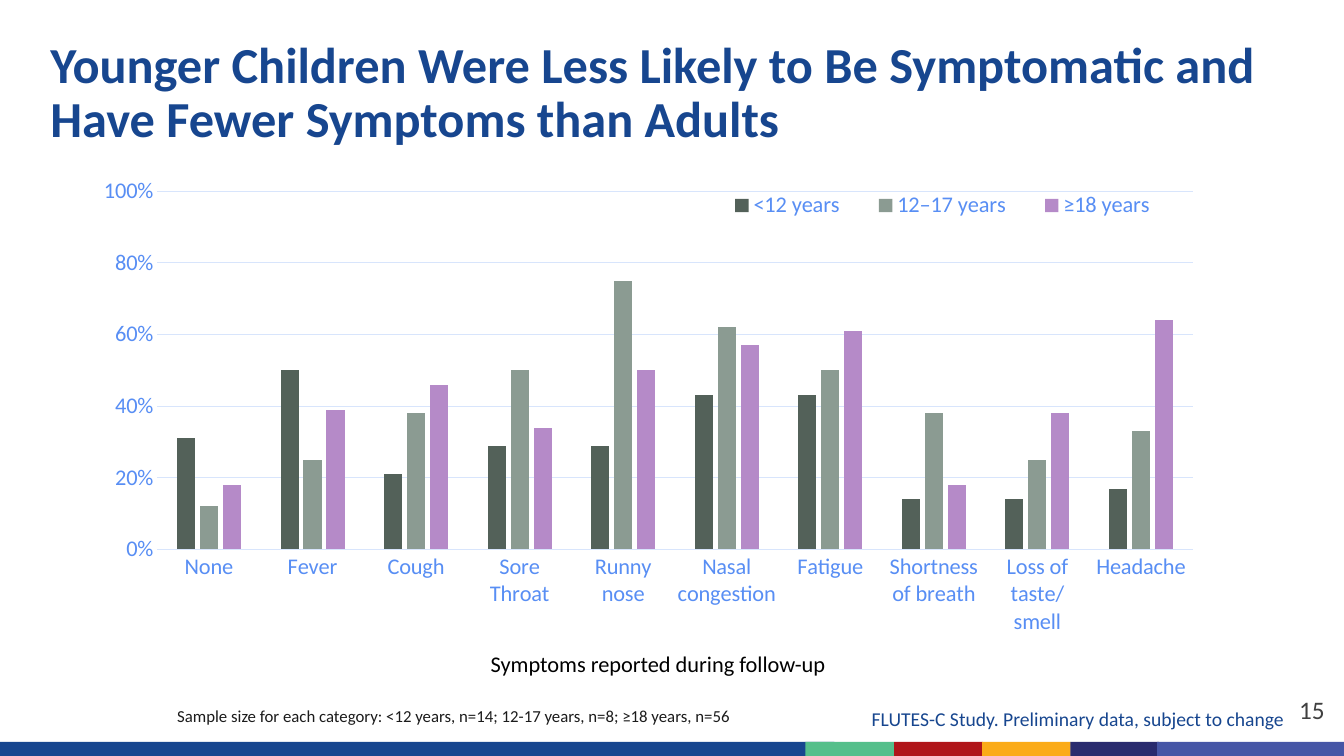
from dataclasses import dataclass

from lxml.etree import SubElement
from pptx import Presentation
from pptx.chart.data import CategoryChartData
from pptx.dml.color import RGBColor
from pptx.enum.chart import XL_CHART_TYPE as ChartType
from pptx.enum.chart import XL_LEGEND_POSITION as LegendPos
from pptx.enum.chart import XL_TICK_MARK as Tick
from pptx.enum.shapes import MSO_SHAPE as Shape
from pptx.enum.text import MSO_ANCHOR as Anchor
from pptx.enum.text import MSO_AUTO_SIZE as AutoSize
from pptx.enum.text import PP_ALIGN as Align
from pptx.oxml.ns import qn
from pptx.util import Pt

FONT = "Calibri"
COLORS = {
    "navy": "17468F", "green": "55BF8B", "red": "B01519", "amber": "FBAB18",
    "indigo": "292B6E", "violet": "4656A6", "black": "000000", "ink": "1B1B1B",
    "gray": "404040", "label": "588EF4", "grid": "D8E5FC", "under_12": "536159",
    "teens": "8B9B92", "adults": "B58AC8",
}


@dataclass
class Band:
    left: float
    width: float
    color: str


@dataclass
class Label:
    text: str
    left: float
    top: float
    width: float
    height: float
    size: int
    color: str
    wrap: bool = False


@dataclass
class AgeGroup:
    name: str
    color: str
    shares: tuple[float, ...]


BANDS = [
    Band(0, 596, "navy"),
    Band(575.3, 63.3, "green"),
    Band(638.6, 63.3, "red"),
    Band(701.5, 63.3, "amber"),
    Band(764.6, 63.3, "indigo"),
    Band(826.6, 133.4, "violet"),
]
LABELS = [
    Label("Symptoms reported during follow-up", 343.4, 460.8, 257, 26.6, 16, "black"),
    Label("15", 920.9, 492.5, 33, 29, 18, "gray"),
    Label("Sample size for each category: <12 years, n=14; 12-17 years, n=8; "
          "≥18 years, n=56", 119.5, 500.4, 504, 21.8, 12, "ink", True),
    Label("FLUTES-C Study. Preliminary data, subject to change",
          615.6, 501.1, 311.8, 24.2, 14, "navy"),
]
SYMPTOMS = ["None", "Fever", "Cough", "Sore Throat", "Runny nose", "Nasal congestion",
            "Fatigue", "Shortness of breath", "Loss of taste/smell", "Headache"]
AGE_GROUPS = [
    AgeGroup("<12 years", "under_12",
             (0.31, 0.5, 0.21, 0.29, 0.29, 0.43, 0.43, 0.14, 0.14, 0.17)),
    AgeGroup("12–17 years", "teens",
             (0.12, 0.25, 0.38, 0.5, 0.75, 0.62, 0.5, 0.38, 0.25, 0.33)),
    AgeGroup("≥18 years", "adults",
             (0.18, 0.39, 0.46, 0.34, 0.5, 0.57, 0.61, 0.18, 0.38, 0.64)),
]


def rgb(name: str) -> RGBColor:
    """Look up a palette colour."""
    return RGBColor.from_string(COLORS[name])


def style_font(font, size: int, color: str, bold: bool = False) -> None:
    """Apply the slide font with a size, colour and weight."""
    font.name, font.size, font.bold = FONT, Pt(size), bold
    font.color.rgb = rgb(color)


def style_line(line) -> None:
    """Give a chart line the pale grid look."""
    line.color.rgb = rgb("grid")
    line.width = Pt(0.75)


def add_band(s, band: Band) -> None:
    """Draw one colour band along the bottom edge."""
    sp = s.shapes.add_shape(Shape.RECTANGLE, Pt(band.left), Pt(530), Pt(band.width), Pt(10))
    sp.shadow.inherit = False
    sp.fill.solid()
    sp.fill.fore_color.rgb = rgb(band.color)
    sp.line.fill.background()


def add_label(s, label: Label) -> None:
    """Write one line of text in its own box."""
    sp = s.shapes.add_textbox(Pt(label.left), Pt(label.top), Pt(label.width), Pt(label.height))
    tf = sp.text_frame
    tf.word_wrap = label.wrap
    tf.auto_size = AutoSize.SHAPE_TO_FIT_TEXT
    r = tf.paragraphs[0].add_run()
    r.text = label.text
    style_font(r.font, label.size, label.color)


def set_title(s, text: str) -> None:
    """Place and format the title placeholder."""
    sp = s.shapes.title
    sp.left, sp.top, sp.width, sp.height = Pt(28.8), Pt(15.1), Pt(916.6), Pt(104.4)
    tf = sp.text_frame
    tf.word_wrap = True
    tf.auto_size = AutoSize.NONE
    tf.vertical_anchor = Anchor.MIDDLE
    p = tf.paragraphs[0]
    p.alignment = Align.LEFT
    p.line_spacing = 0.9
    p.space_before = Pt(0)
    r = p.add_run()
    r.text = text
    style_font(r.font, 36, "navy", True)


def set_layout(parent, index: int, inner: bool, x: float, y: float, w: float, h: float) -> None:
    """Fix the place of a chart part as fractions of the chart."""
    for old in parent.findall(qn("c:layout")):
        parent.remove(old)
    layout = SubElement(parent, qn("c:layout"))
    parent.insert(index, layout)
    manual = SubElement(layout, qn("c:manualLayout"))
    settings = [("layoutTarget", "inner")] if inner else []
    settings += [("xMode", "edge"), ("yMode", "edge"), ("x", x), ("y", y), ("w", w), ("h", h)]
    for tag, value in settings:
        SubElement(manual, qn(f"c:{tag}")).set("val", str(value))


def add_symptom_chart(s) -> None:
    """Add the clustered columns of symptoms by age group."""
    data = CategoryChartData(number_format="0%")
    data.categories = SYMPTOMS
    for group in AGE_GROUPS:
        data.add_series(group.name, group.shares)
    chart = s.shapes.add_chart(ChartType.COLUMN_CLUSTERED, Pt(55.4), Pt(119.5),
                               Pt(812.9), Pt(341.3), data).chart
    style_font(chart.font, 16, "label")
    chart.has_title = False

    plot = chart.plots[0]
    plot.gap_width, plot.overlap, plot.vary_by_categories = 219, -27, False
    for series, group in zip(plot.series, AGE_GROUPS):
        series.format.fill.solid()
        series.format.fill.fore_color.rgb = rgb(group.color)
        series.invert_if_negative = False

    for axis in (chart.category_axis, chart.value_axis):
        axis.major_tick_mark = axis.minor_tick_mark = Tick.NONE
        style_font(axis.tick_labels.font, 16, "label")
    style_line(chart.category_axis.format.line)
    values = chart.value_axis
    values.minimum_scale, values.maximum_scale, values.major_unit = 0, 1, 0.2
    values.tick_labels.number_format = "0%"
    values.tick_labels.number_format_is_linked = False
    values.format.line.fill.background()
    values.has_major_gridlines = True
    style_line(values.major_gridlines.format.line)

    chart.has_legend = True
    chart.legend.position = LegendPos.TOP
    chart.legend.include_in_layout = True
    style_font(chart.legend.font, 16, "label")
    root = chart.element
    set_layout(root.find(".//" + qn("c:plotArea")), 0, True, 0.07, 0.05, 0.91, 0.75)
    set_layout(root.find(".//" + qn("c:legend")), 1, False, 0.55, 0.04, 0.42, 0.08)


def main() -> None:
    """Build the slide and save it."""
    prs = Presentation()
    prs.slide_width, prs.slide_height = Pt(960), Pt(540)
    s = prs.slides.add_slide(prs.slide_layouts[5])
    for band in BANDS:
        add_band(s, band)
    set_title(s, "Younger Children Were Less Likely to Be Symptomatic and "
                 "Have Fewer Symptoms than Adults")
    add_symptom_chart(s)
    for label in LABELS:
        add_label(s, label)
    prs.save("out.pptx")


if __name__ == "__main__":
    main()
